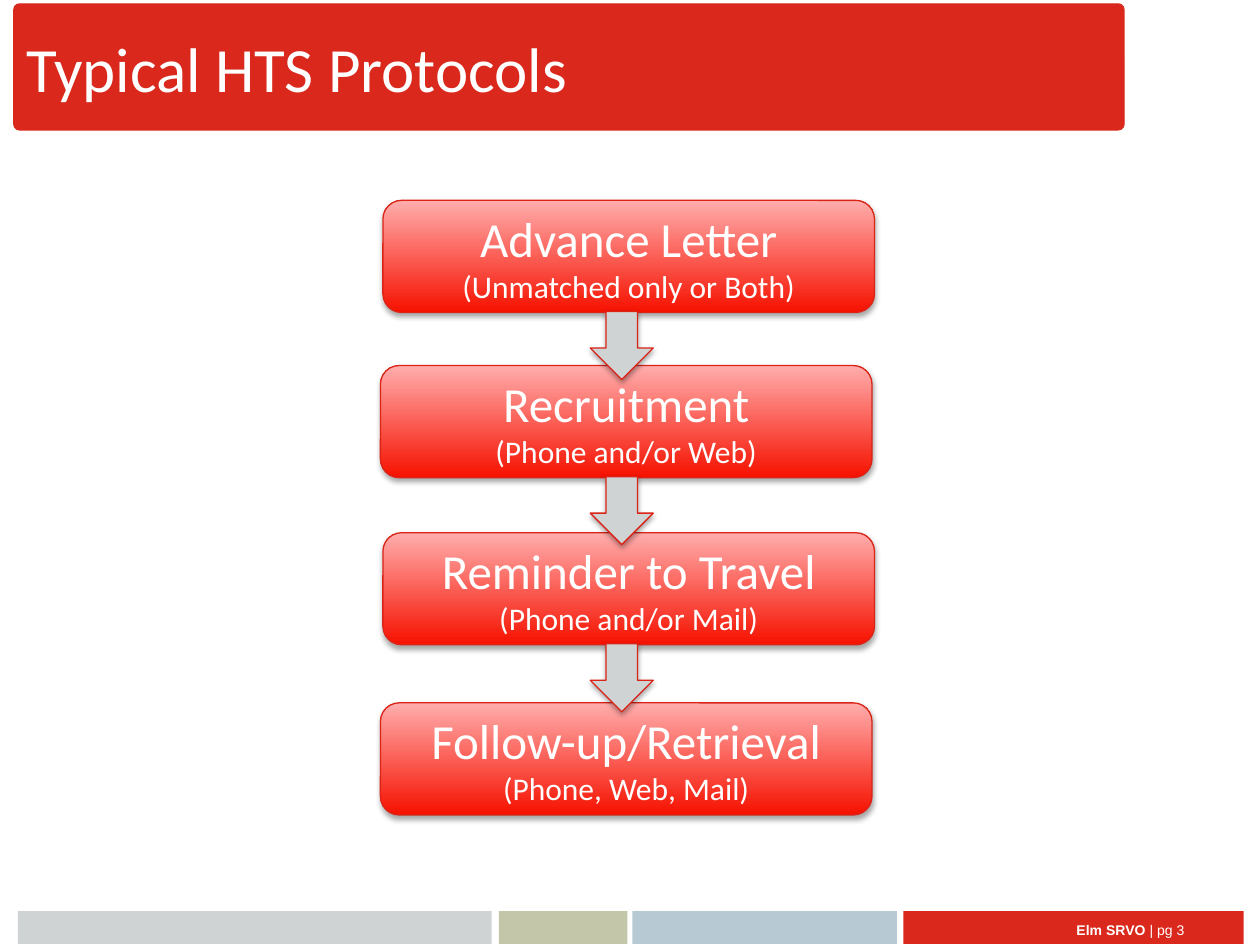
from lxml import etree
from pptx import Presentation
from pptx.dml.color import RGBColor
from pptx.enum.shapes import MSO_SHAPE
from pptx.enum.text import MSO_ANCHOR, MSO_AUTO_SIZE, PP_ALIGN
from pptx.oxml.ns import qn
from pptx.util import Cm, Pt

ROUNDED = MSO_SHAPE.ROUNDED_RECTANGLE
STEP_BOX = MSO_SHAPE.FLOWCHART_ALTERNATE_PROCESS
DOWN_ARROW = MSO_SHAPE.DOWN_ARROW
MIDDLE = MSO_ANCHOR.MIDDLE
NO_AUTOFIT = MSO_AUTO_SIZE.NONE
LEFT, CENTER, RIGHT = PP_ALIGN.LEFT, PP_ALIGN.CENTER, PP_ALIGN.RIGHT

RED = RGBColor(0xDA, 0x29, 0x1C)
OUTLINE_RED = RGBColor(0xDA, 0x24, 0x17)
DEEP_RED = RGBColor(0xF6, 0x11, 0x00)
PINK = RGBColor(0xFF, 0xAD, 0xAC)
GREY = RGBColor(0xD0, 0xD3, 0xD4)
OLIVE = RGBColor(0xC3, 0xC6, 0xA8)
BLUE = RGBColor(0xB7, 0xC9, 0xD3)
WHITE = RGBColor(0xFF, 0xFF, 0xFF)

# Name, means of contact, left and top within the flow (cm)
STEPS = [
    ("Advance Letter", "(Unmatched only or Both)", 0.05, 0),
    ("Recruitment", "(Phone and/or Web)", 0, 3.33),
    ("Reminder to Travel", "(Phone and/or Mail)", 0.05, 6.7),
    ("Follow-up/Retrieval", "(Phone, Web, Mail)", 0, 10.13),
]
STEP_HEIGHT = 2.26

# Left within the footer, width (cm) and colour
FOOTER_BARS = [
    (0, 9.55, GREY),
    (9.7, 2.59, OLIVE),
    (12.39, 5.33, BLUE),
    (17.85, 6.86, RED),
]


def add_block(shapes, kind, left, top, width, height, line=None):
    block = shapes.add_shape(kind, Cm(left), Cm(top), Cm(width), Cm(height))
    block.shadow.inherit = False
    if line is None:
        block.line.fill.background()
    else:
        block.line.color.rgb = line
        block.line.width = Pt(0.75)
    return block


def fill_solid(block, color):
    block.fill.solid()
    block.fill.fore_color.rgb = color


def add_drop_shadow(block):
    effects = block.element.spPr.find(qn("a:effectLst"))
    shadow = etree.SubElement(
        effects, qn("a:outerShdw"), blurRad=str(Pt(3.1)), dist=str(Pt(1.8)),
        dir="5400000", rotWithShape="0")
    color = etree.SubElement(shadow, qn("a:srgbClr"), val="000000")
    etree.SubElement(color, qn("a:alpha"), val="35000")


def style_paragraph(paragraph, size, font, alignment):
    paragraph.alignment = alignment
    paragraph.font.size = Pt(size)
    paragraph.font.name = font
    paragraph.font.color.rgb = WHITE


def add_header(slide, left, top, width, height):
    banner = add_block(slide.shapes, ROUNDED, left, top, width, height, RED)
    banner.adjustments[0] = 0.045
    fill_solid(banner, RED)

    # Bring the title in front of its banner
    title = slide.shapes.title
    banner.element.addnext(title.element)
    title.left, title.top = Cm(left), Cm(top)
    title.width, title.height = Cm(width + 0.38), Cm(height + 0.02)
    title.text_frame.auto_size = NO_AUTOFIT
    title.text_frame.vertical_anchor = MIDDLE
    title.text_frame.text = "Typical HTS Protocols"
    style_paragraph(title.text_frame.paragraphs[0], 36, "Calibri", LEFT)


def add_flow(slide, left, top, width):
    flow = slide.shapes.add_group_shape().shapes

    # Steps
    for name, contact, x, y in STEPS:
        step = add_block(flow, STEP_BOX, left + x, top + y, width, STEP_HEIGHT,
                         OUTLINE_RED)
        step.fill.gradient()
        step.fill.gradient_angle = 90
        for stop, color in zip(step.fill.gradient_stops, (DEEP_RED, PINK)):
            stop.color.rgb = color
        add_drop_shadow(step)
        frame = step.text_frame
        frame.vertical_anchor = MIDDLE
        frame.text = f"{name}\n{contact}"
        for paragraph, size in zip(frame.paragraphs, (28, 18)):
            style_paragraph(paragraph, size, "Calibri", CENTER)

    # Arrows from each step to the next
    for _, _, _, y in STEPS[:-1]:
        arrow = add_block(flow, DOWN_ARROW, left + 4.23, top + y + STEP_HEIGHT - 0.02,
                          1.27, 1.37, OUTLINE_RED)
        fill_solid(arrow, GREY)
        add_drop_shadow(arrow)


def add_footer(slide, left, top, height):
    for x, width, color in FOOTER_BARS:
        bar = add_block(slide.shapes, ROUNDED, left + x, top, width, height)
        bar.adjustments[0] = 0
        fill_solid(bar, color)

    # Firm and page number on the last bar
    page_label = slide.shapes.add_textbox(
        Cm(left + x), Cm(top), Cm(5.92), Cm(height + 0.08))
    frame = page_label.text_frame
    frame.word_wrap = True
    frame.vertical_anchor = MIDDLE
    paragraph = frame.paragraphs[0]
    firm = paragraph.add_run()
    firm.text = "Elm SRVO "
    firm.font.bold = True
    paragraph.add_run().text = "| pg 3"
    style_paragraph(paragraph, 8, "Arial", RIGHT)


def main():
    deck = Presentation()
    deck.slide_width, deck.slide_height = Cm(25.4), Cm(19.05)
    slide = deck.slides.add_slide(deck.slide_layouts[5])
    add_footer(slide, 0.36, 18.37, 0.66)
    add_header(slide, 0.28, 0.08, 22.38, 2.54)
    add_flow(slide, 7.67, 4.04, 9.91)
    deck.save("out.pptx")


if __name__ == "__main__":
    main()
